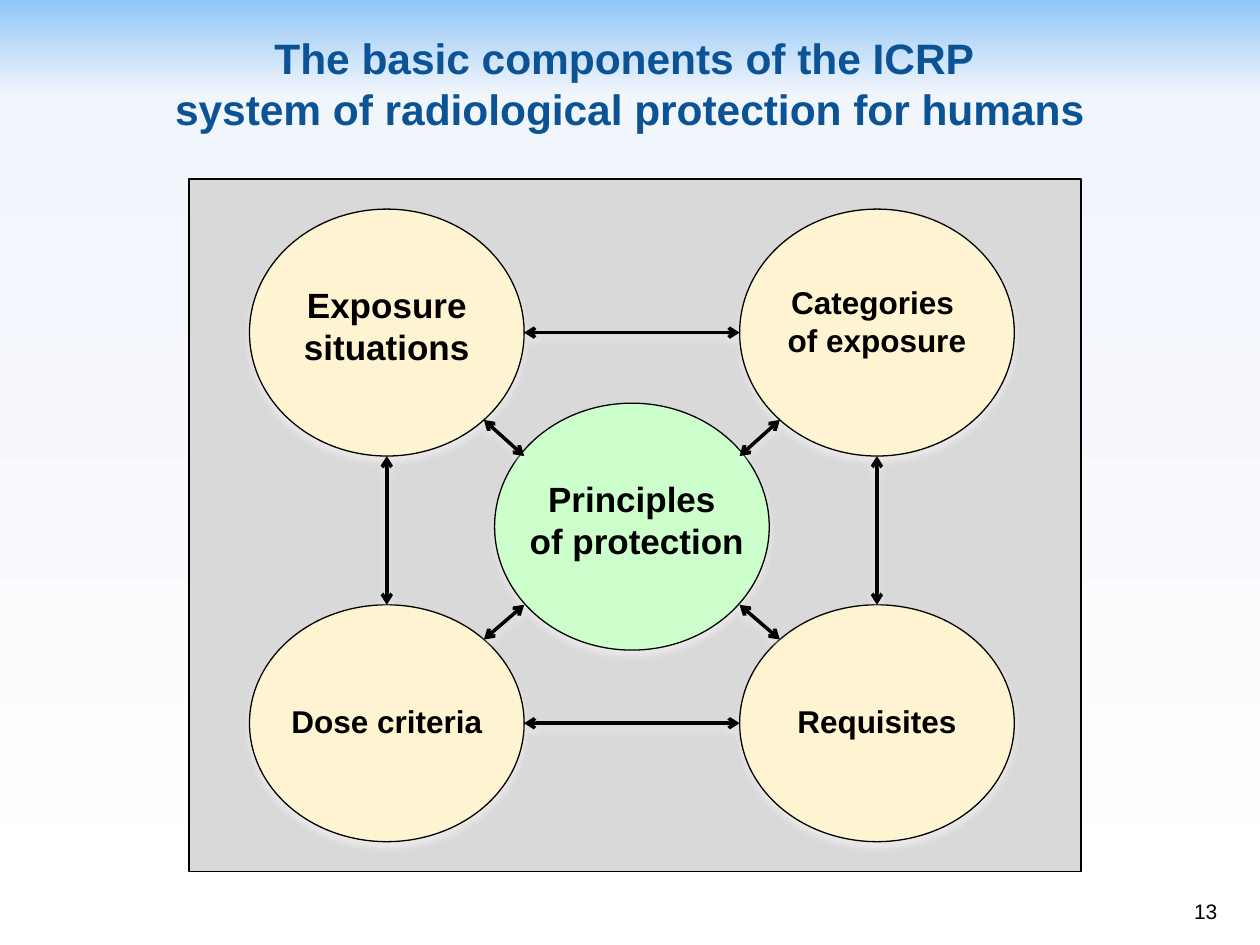
import math
from dataclasses import dataclass

import lxml.etree
import pptx
import pptx.dml.color
import pptx.enum.shapes
import pptx.enum.text
import pptx.oxml
import pptx.oxml.ns
import pptx.util

SHAPE = pptx.enum.shapes.MSO_SHAPE
ALIGN = pptx.enum.text.PP_ALIGN
ANCHOR = pptx.enum.text.MSO_ANCHOR
qn = pptx.oxml.ns.qn
COLUMNS, ROWS = 100, 75
CELL = pptx.util.Inches(0.1)


@dataclass(frozen=True)
class Theme:
    """Colours, type sizes and line widths of the slide."""
    font: str = "Arial"
    ink: str = "000000"
    title: str = "0B5394"
    panel: str = "D9D9D9"
    core: str = "CCFFCC"
    outer: str = "FFF4D1"
    glow: str = "FFFFFF"
    sky: tuple = ((0, "91C6F7"), (10, "F1F5FC"), (100, "FFFFFF"))
    title_size: float = 24.3
    large: float = 20
    medium: float = 18
    small: float = 12
    outline: float = 0.75
    arrow: float = 2


THEME = Theme()


@dataclass(frozen=True)
class Box:
    """A rectangle measured in grid columns and rows."""
    left: float
    top: float
    width: float
    height: float

    def inside(self, left, top, width, height):
        """Return a box placed relative to this one."""
        return Box(self.left + left, self.top + top, width, height)

    def point(self, across, down):
        """Return a point, from -1 to 1 each way about the centre."""
        return (self.left + self.width * (1 + across) / 2,
                self.top + self.height * (1 + down) / 2)

    def emu(self):
        """Return left, top, width and height as lengths."""
        return cells(self.left, self.top, self.width, self.height)


def cells(*counts):
    """Turn counts of grid cells into lengths."""
    return [round(count * CELL) for count in counts]


def rgb(value):
    """Return a colour from its hex string."""
    return pptx.dml.color.RGBColor.from_string(value)


def add_glow(item):
    """Give a shape or connector the soft light shadow below it."""
    effects = lxml.etree.SubElement(item._element.spPr, qn("a:effectLst"))
    shadow = lxml.etree.SubElement(
        effects, qn("a:outerShdw"), blurRad=str(pptx.util.Pt(4.5)),
        dist=str(pptx.util.Pt(3)), dir="5400000", algn="ctr", rotWithShape="0")
    colour = lxml.etree.SubElement(shadow, qn("a:srgbClr"), val=THEME.glow)
    lxml.etree.SubElement(colour, qn("a:alpha"), val="48000")


def add_shape(page, kind, box, fill):
    """Draw an outlined shape that fills the box."""
    shape = page.shapes.add_shape(kind, *box.emu())
    shape.fill.solid()
    shape.fill.fore_color.rgb = rgb(fill)
    shape.line.color.rgb = rgb(THEME.ink)
    shape.line.width = pptx.util.Pt(THEME.outline)
    add_glow(shape)


def add_text(page, box, lines, size, colour=THEME.ink, bold=True,
             align=ALIGN.CENTER, anchor=ANCHOR.TOP):
    """Write one paragraph for each line of text in the box."""
    frame = page.shapes.add_textbox(*box.emu()).text_frame
    frame.word_wrap = True
    frame.vertical_anchor = anchor
    frame.text = "\n".join(lines)
    for para in frame.paragraphs:
        para.alignment = align
        para.font.name = THEME.font
        para.font.size = pptx.util.Pt(size)
        para.font.bold = bold
        para.font.color.rgb = rgb(colour)
    return frame


def add_arrow(page, start, end):
    """Draw a two-headed arrow between two grid points."""
    arrow = page.shapes.add_connector(
        pptx.enum.shapes.MSO_CONNECTOR.STRAIGHT, *cells(*start, *end))
    arrow.line.color.rgb = rgb(THEME.ink)
    arrow.line.width = pptx.util.Pt(THEME.arrow)
    line = arrow._element.spPr.find(qn("a:ln"))
    for tip in ("a:headEnd", "a:tailEnd"):
        lxml.etree.SubElement(line, qn(tip), type="arrow")
    add_glow(arrow)


def paint_background(page):
    """Fill the page with the sky gradient from top to bottom."""
    fill = page.background.fill
    fill.gradient()
    fill.gradient_angle = 270
    stops = page.element.find(".//" + qn("a:gsLst"))
    for stop in list(stops):
        stops.remove(stop)
    for percent, colour in THEME.sky:
        stop = lxml.etree.SubElement(stops, qn("a:gs"), pos=str(percent * 1000))
        lxml.etree.SubElement(stop, qn("a:srgbClr"), val=colour)


def add_title(page, box):
    """Write the two-line heading."""
    frame = add_text(
        page, box,
        ["The basic components of the ICRP \vsystem of radiological protection for humans"],
        THEME.title_size, THEME.title, anchor=ANCHOR.MIDDLE)
    frame.margin_left = frame.margin_right = frame.margin_bottom = 0


def add_node(page, box, fill, lines, size, drop):
    """Draw an ellipse with its label some rows below the top."""
    add_shape(page, SHAPE.OVAL, box, fill)
    add_text(page, box.inside(0, drop, box.width, 9), lines, size)


def add_diagram(page, box):
    """Draw the core principle, its four neighbours and their arrows."""
    add_shape(page, SHAPE.RECTANGLE, box, THEME.panel)
    width, left, right = 21.8, 4.8, 43.7
    upper, lower = (2.4, 19.6, 5.4), (33.8, 18.8, 7.2)
    add_node(page, box.inside((left + right) / 2, 17.8, width, 19.6), THEME.core,
             ["Principles", " of protection"], THEME.large, 5.4)
    neighbours = (
        (-1, -1, ["Exposure situations"], THEME.large),
        (1, -1, ["Categories ", "of exposure"], THEME.medium),
        (-1, 1, ["Dose criteria"], THEME.medium),
        (1, 1, ["Requisites"], THEME.medium),
    )
    places = {}
    for across, down, lines, size in neighbours:
        top, height, drop = upper if down < 0 else lower
        place = box.inside(left if across < 0 else right, top, width, height)
        places[across, down] = place
        add_node(page, place, THEME.outer, lines, size, drop)
        rim = math.sqrt(0.5)
        add_arrow(page, place.point(-across * rim, -down * rim),
                  place.point(-across, -down))
    for side in (-1, 1):
        add_arrow(page, places[-1, side].point(1, 0), places[1, side].point(-1, 0))
        add_arrow(page, places[side, -1].point(0, 1), places[side, 1].point(0, -1))


def add_page_number(page, box):
    """Write the page number in the corner."""
    add_text(page, box, ["13"], THEME.small, bold=False,
             align=ALIGN.RIGHT, anchor=ANCHOR.BOTTOM)


def main():
    """Build the deck and save it."""
    deck = pptx.Presentation()
    deck.slide_width, deck.slide_height = cells(COLUMNS, ROWS)
    page = deck.slides.add_slide(deck.slide_layouts[6])
    paint_background(page)
    add_title(page, Box(0, 1.7, COLUMNS, 9.2))
    add_diagram(page, Box(15, 14.2, 70.8, 55))
    add_page_number(page, Box(76.8, 68.8, 20.8, 5))
    deck.save("out.pptx")


if __name__ == "__main__":
    main()
